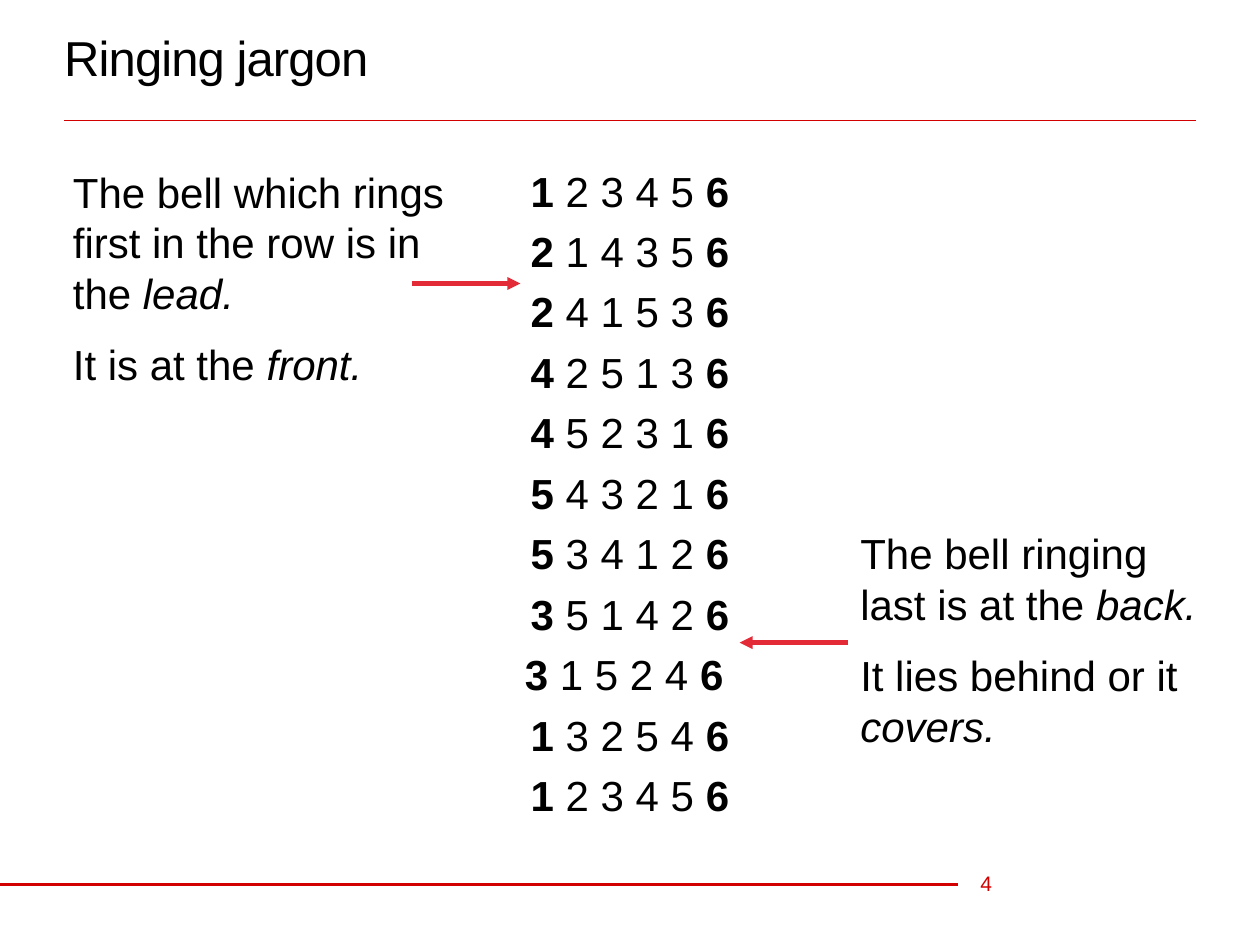
from pptx import Presentation
from pptx import util as u
from pptx.dml.color import RGBColor
from pptx.enum import shapes, text
from pptx.oxml.ns import qn
from lxml import etree

PX = 9144  # 100 px to the inch
COLORS = {"ink": "000000", "rule": "D20000", "arrow": "E32B38"}
FONT = "Arial"
ROWS = ["1 2 3 4 5 6", "2 1 4 3 5 6", "2 4 1 5 3 6", "4 2 5 1 3 6",
        "4 5 2 3 1 6", "5 4 3 2 1 6", "5 3 4 1 2 6", "3 5 1 4 2 6",
        "3 1 5 2 4 6 ", "1 3 2 5 4 6", "1 2 3 4 5 6"]


def px(*nums):
    return [u.Emu(n * PX) for n in nums]


def rgb(name):
    return RGBColor.from_string(COLORS[name])


def add_run(para, words, size=24, color="ink", bold=False, italic=False):
    run = para.add_run()
    run.text = words
    font = run.font
    font.name, font.size = FONT, u.Pt(size)
    font.bold, font.italic = bold, italic
    font.color.rgb = rgb(color)
    return run


def add_box(slide, place, inset=(0, 0), middle=False):
    box = slide.shapes.add_textbox(*px(*place))
    frame = box.text_frame
    frame.word_wrap = True
    frame.margin_left = frame.margin_right = px(inset[0])[0]
    frame.margin_top = frame.margin_bottom = px(inset[1])[0]
    if middle:
        frame.vertical_anchor = text.MSO_ANCHOR.MIDDLE
    return box


def add_note(slide, place, lines):
    """Paragraphs that each end in an italic term."""
    box = add_box(slide, place, (10, 5))
    frame = box.text_frame
    for i, (words, term) in enumerate(lines):
        para = frame.add_paragraph() if i else frame.paragraphs[0]
        if i:
            para.space_before = u.Pt(12)
        add_run(para, words)
        add_run(para, term, italic=True)
    return box


def add_rows(slide, place):
    """Rows of bells with the first and last bell in bold."""
    para = add_box(slide, place).text_frame.paragraphs[0]
    para.alignment = text.PP_ALIGN.CENTER
    para.line_spacing = 1.2
    for i, row in enumerate(ROWS):
        if i:
            para.add_line_break()
        add_run(para, row[0], bold=True)
        add_run(para, row[1:10])
        add_run(para, row[10:], bold=True)


def add_line(slide, ends, color, width, arrow=False):
    line = slide.shapes.add_connector(shapes.MSO_CONNECTOR.STRAIGHT, *px(*ends))
    line.line.color.rgb = rgb(color)
    line.line.width = u.Pt(width)
    if arrow:
        etree.SubElement(line.line._get_or_add_ln(), qn("a:tailEnd"), type="triangle")
    etree.SubElement(line._element.spPr, qn("a:effectLst"))
    return line


def main():
    deck = Presentation()
    deck.slide_width, deck.slide_height = px(1000, 750)
    slide = deck.slides.add_slide(deck.slide_layouts[6])

    # Rules and page number
    add_line(slide, (51, 96, 949, 96), "rule", 0.5)
    add_line(slide, (0, 702, 760, 702), "rule", 2)
    page = add_box(slide, (778, 681, 51, 40), middle=True)
    add_run(page.text_frame.paragraphs[0], "4", 12, "rule")

    # Title
    title = add_box(slide, (51, 5, 898, 81), middle=True)
    run = add_run(title.text_frame.paragraphs[0], "Ringing jargon", 28)
    run.font._element.set("spc", "-50")

    # Bell rows and notes
    add_rows(slide, (51, 123, 898, 543))
    add_note(slide, (48, 127, 315, 192), [
        ("The bell which rings first in the row is in the ", "lead."),
        ("It is at the ", "front.")])
    back = add_note(slide, (673, 414, 303, 192), [
        ("The bell ringing last is at the ", "back."),
        ("It lies behind or it ", "covers.")])

    # Arrows to the front and back bells
    add_line(slide, (327, 225, 413, 225), "arrow", 2.5, arrow=True)
    link = add_line(slide, (673, 510, 587, 510), "arrow", 2.5, arrow=True)
    link.begin_connect(back, 1)

    deck.save("out.pptx")


if __name__ == "__main__":
    main()
